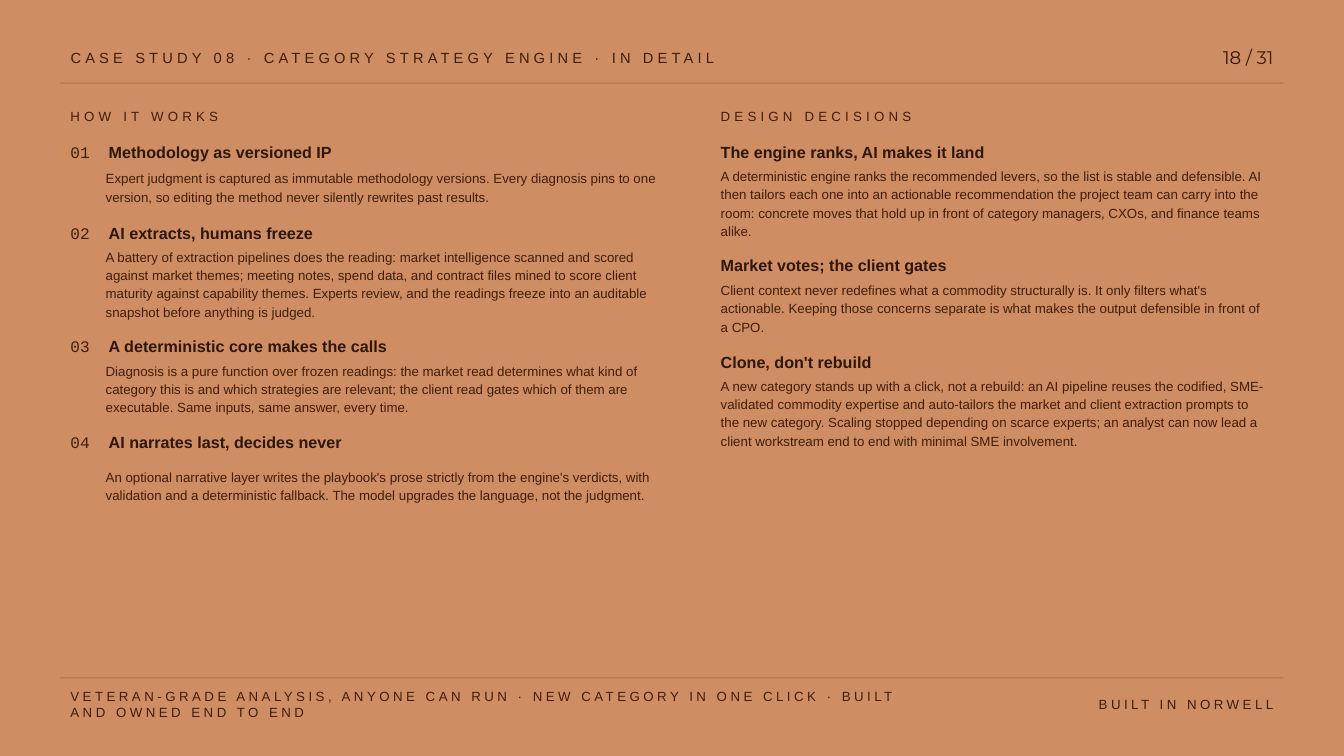
"""Build the case study detail slide with two columns of headed notes."""
from lxml.etree import SubElement
from pptx import Presentation
from pptx.dml.color import RGBColor
from pptx.enum.shapes import MSO_SHAPE
from pptx.enum.text import MSO_ANCHOR, MSO_AUTO_SIZE, PP_ALIGN
from pptx.oxml.ns import qn
from pptx.util import Pt

PX = 9144
CLAY = RGBColor(0xCF, 0x8D, 0x63)
RULE = RGBColor(0xAD, 0x73, 0x50)
BROWN = RGBColor(0x40, 0x1E, 0x0A)
DARK = RGBColor(0x2E, 0x16, 0x08)

COLUMN_TOP, HEADING_HEIGHT, BODY_OFFSET, ITEM_GAP = 138, 26, 28, 14
NUMBER_TAB = 38

HOW_IT_WORKS = [
    ("Methodology as versioned IP", 38,
     "Expert judgment is captured as immutable methodology versions. Every diagnosis pins to one "
     "version, so editing the method never silently rewrites past results."),
    ("AI extracts, humans freeze", 70,
     "A battery of extraction pipelines does the reading: market intelligence scanned and scored "
     "against market themes; meeting notes, spend data, and contract files mined to score client "
     "maturity against capability themes. Experts review, and the readings freeze into an auditable "
     "snapshot before anything is judged."),
    ("A deterministic core makes the calls", 54,
     "Diagnosis is a pure function over frozen readings: the market read determines what kind of "
     "category this is and which strategies are relevant; the client read gates which of them are "
     "executable. Same inputs, same answer, every time."),
    ("AI narrates last, decides never", 54,
     "An optional narrative layer writes the playbook's prose strictly from the engine's verdicts, "
     "with validation and a deterministic fallback. The model upgrades the language, not the judgment."),
]
DESIGN_DECISIONS = [
    ("The engine ranks, AI makes it land", 70,
     "A deterministic engine ranks the recommended levers, so the list is stable and defensible. AI "
     "then tailors each one into an actionable recommendation the project team can carry into the "
     "room: concrete moves that hold up in front of category managers, CXOs, and finance teams alike."),
    ("Market votes; the client gates", 54,
     "Client context never redefines what a commodity structurally is. It only filters what's "
     "actionable. Keeping those concerns separate is what makes the output defensible in front of "
     "a CPO."),
    ("Clone, don't rebuild", 70,
     "A new category stands up with a click, not a rebuild: an AI pipeline reuses the codified, "
     "SME-validated commodity expertise and auto-tailors the market and client extraction prompts to "
     "the new category. Scaling stopped depending on scarce experts; an analyst can now lead a "
     "client workstream end to end with minimal SME involvement."),
]


def add_run(paragraph, text, *, size=9.5, color=BROWN, font="Arial", bold=False, spacing=0):
    """Append one formatted run to a paragraph."""
    run = paragraph.add_run()
    run.text = text
    run.font.size = Pt(size)
    run.font.name = font
    run.font.bold = bold
    run.font.color.rgb = color
    if spacing:
        run.font._element.set("spc", str(int(spacing * 100)))


class SlideBuilder:
    """Hold the slide and draw its elements in px."""

    def __init__(self, slide):
        """Keep the slide and paint its background."""
        self.slide = slide
        slide.background.fill.solid()
        slide.background.fill.fore_color.rgb = CLAY

    def place(self, shape, left, top, width, height, align=PP_ALIGN.LEFT):
        """Position a text shape and return its first paragraph."""
        shape.left, shape.top = left * PX, top * PX
        shape.width, shape.height = width * PX, height * PX
        frame = shape.text_frame
        frame.word_wrap = True
        frame.auto_size = MSO_AUTO_SIZE.NONE
        frame.vertical_anchor = MSO_ANCHOR.MIDDLE
        paragraph = frame.paragraphs[0]
        paragraph.alignment = align
        return paragraph

    def title(self, text, *box):
        """Fill and format the title placeholder."""
        paragraph = self.place(self.slide.shapes.title, *box)
        add_run(paragraph, text, size=10.5, spacing=3)

    def text_box(self, *box, align=PP_ALIGN.LEFT):
        """Add an empty text box and return its paragraph."""
        shape = self.slide.shapes.add_textbox(0, 0, PX, PX)
        return self.place(shape, *box, align=align)

    def rule(self, top):
        """Draw a thin line across the slide."""
        shape = self.slide.shapes.add_shape(
            MSO_SHAPE.RECTANGLE, 60 * PX, top * PX, 1213 * PX, PX)
        shape.shadow.inherit = False
        shape.fill.solid()
        shape.fill.fore_color.rgb = RULE
        shape.line.fill.background()

    def heading(self, text, left, top, width, number=None):
        """Add a bold item heading, with a number before it if given."""
        paragraph = self.text_box(left, top, width, HEADING_HEIGHT)
        if number:
            tabs = SubElement(paragraph._p.get_or_add_pPr(), qn("a:tabLst"))
            SubElement(tabs, qn("a:tab"), pos=str(NUMBER_TAB * PX), algn="l")
            add_run(paragraph, f"{number:02d}\t", size=11.5, font="Courier New")
        add_run(paragraph, text, size=11.5, color=DARK, bold=True)

    def column(self, label, items, left, width, indent=0, numbered=False):
        """Stack headed notes under a spaced label."""
        add_run(self.text_box(left, 102, 400, 26), label, spacing=3)
        top = COLUMN_TOP
        for number, (heading, height, body) in enumerate(items, 1):
            self.heading(heading, left, top, width + indent, number if numbered else None)
            top += BODY_OFFSET
            paragraph = self.text_box(left + indent, top, width, height)
            paragraph.line_spacing = 1.15
            add_run(paragraph, body)
            top += height + ITEM_GAP


def main():
    """Create and save the presentation."""
    presentation = Presentation()
    presentation.slide_width, presentation.slide_height = 1333 * PX, 750 * PX
    slide = presentation.slides.add_slide(presentation.slide_layouts.get_by_name("Title Only"))
    builder = SlideBuilder(slide)

    builder.title("CASE STUDY 08 · CATEGORY STRATEGY ENGINE · IN DETAIL", 60, 42, 950, 30)
    page = builder.text_box(1133, 40, 140, 34, align=PP_ALIGN.RIGHT)
    add_run(page, "18", size=13, font="Montserrat", color=DARK)
    add_run(page, " / 31", size=13, font="Montserrat")
    for top in (82, 672):
        builder.rule(top)

    builder.column("HOW IT WORKS", HOW_IT_WORKS, 60, 570, indent=35, numbered=True)
    builder.column("DESIGN DECISIONS", DESIGN_DECISIONS, 705, 565)

    add_run(builder.text_box(60, 684, 860, 30),
            "VETERAN-GRADE ANALYSIS, ANYONE CAN RUN · NEW CATEGORY IN ONE CLICK · "
            "BUILT AND OWNED END TO END", spacing=2.5)
    add_run(builder.text_box(853, 684, 420, 30, align=PP_ALIGN.RIGHT),
            "BUILT IN NORWELL", spacing=2.5)
    presentation.save("out.pptx")


if __name__ == "__main__":
    main()
